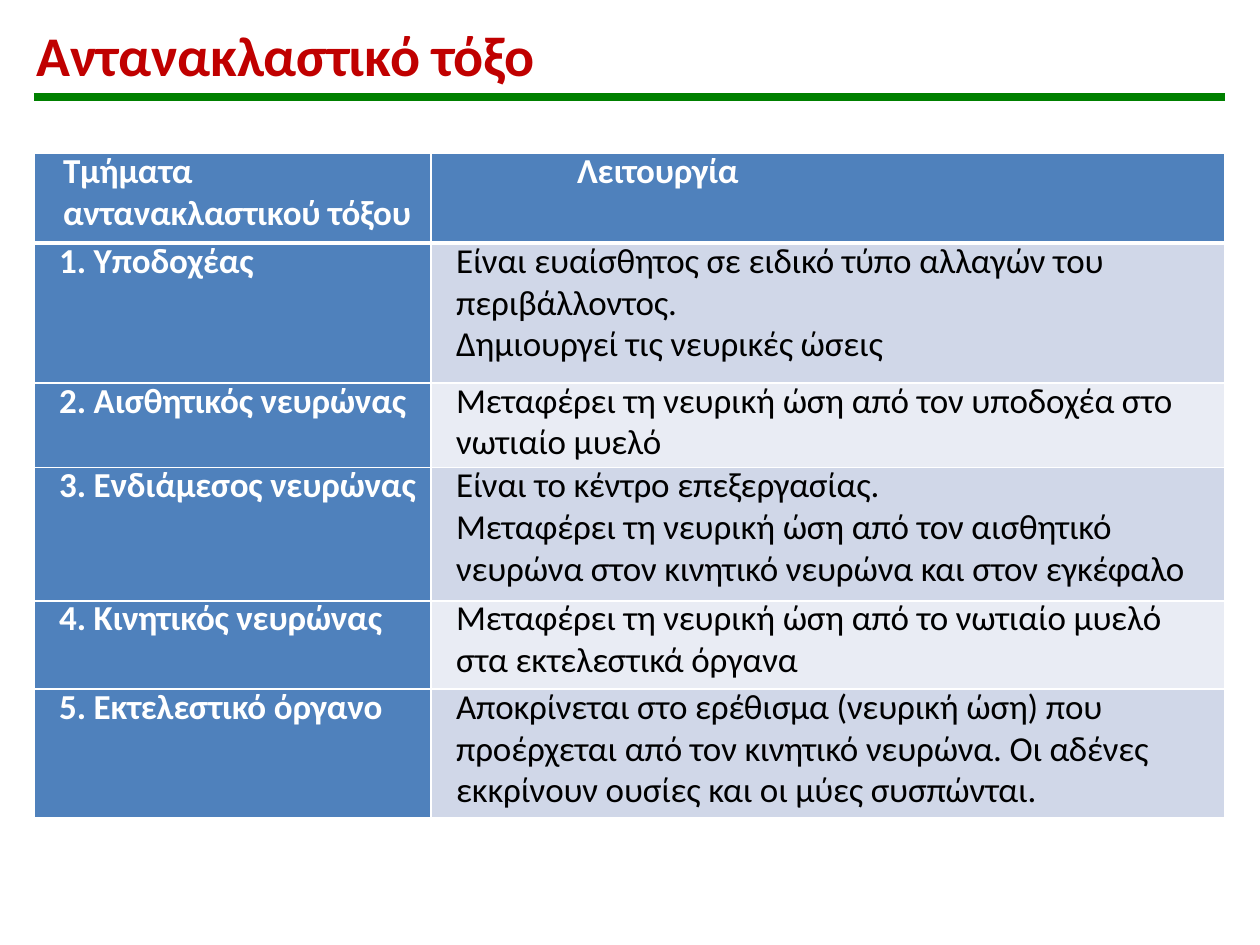
from pptx import Presentation
from pptx.dml.color import RGBColor
from pptx.enum.shapes import MSO_CONNECTOR as Conn
from pptx.oxml.ns import qn
from pptx.util import Inches, Pt
from lxml.etree import SubElement, Element

W, H = 10, 7.5
LEFT, RIGHT = 0.27, 9.72
BLUE, DARK_BAND, LIGHT_BAND = "4F81BC", "D0D7E8", "E9ECF4"
WHITE, BLACK, RED, GREEN = "FFFFFF", "000000", "C00000", "008000"

COLUMNS = [3.15, 6.3]
ROW_HEIGHTS = [0.71, 1.11, 0.67, 1.06, 0.7, 1.02]
FIRST_LINE, NEXT_LINE = 22.6, 23.9  # line pitch in points

HEADER = (["Τμήματα", "αντανακλαστικού τόξου"], ["Λειτουργία"])
PARTS = [
    ("1. Υποδοχέας",
     ["Είναι ευαίσθητος σε ειδικό τύπο αλλαγών του",
      "περιβάλλοντος.",
      "Δημιουργεί τις νευρικές ώσεις"]),
    ("2. Αισθητικός νευρώνας",
     ["Μεταφέρει τη νευρική ώση από τον υποδοχέα στο",
      "νωτιαίο μυελό"]),
    ("3. Ενδιάμεσος νευρώνας",
     ["Είναι το κέντρο επεξεργασίας.",
      "Μεταφέρει τη νευρική ώση από τον αισθητικό  νευρώνα "
      "στον κινητικό νευρώνα και στον εγκέφαλο"]),
    ("4. Κινητικός νευρώνας",
     ["Μεταφέρει τη νευρική ώση από το νωτιαίο μυελό",
      "στα εκτελεστικά όργανα"]),
    ("5. Εκτελεστικό όργανο",
     ["Αποκρίνεται στο ερέθισμα (νευρική ώση) που",
      "προέρχεται από τον κινητικό νευρώνα. Οι αδένες  εκκρίνουν "
      "ουσίες και οι μύες συσπώνται."]),
]


def rgb(value):
    return RGBColor.from_string(value)


def add_run(p, text, size, color, bold):
    r = p.add_run()
    r.text = text
    font = r.font
    font.name, font.size, font.bold = "Calibri", Pt(size), bold
    font.color.rgb = rgb(color)
    r._r.get_or_add_rPr().set("spc", "-10")


def set_indent(p, inches):
    pPr = p._p.get_or_add_pPr()
    pPr.set("marL", str(Inches(inches)))
    pPr.set("indent", "0")


def set_borders(cell, top, bottom):
    tcPr = cell._tc.get_or_add_tcPr()
    widths = {"a:lnL": 1, "a:lnR": 1, "a:lnT": top, "a:lnB": bottom}
    for i, (tag, width) in enumerate(widths.items()):
        ln = Element(qn(tag), w=str(Pt(width)))
        fill = SubElement(ln, qn("a:solidFill"))
        SubElement(fill, qn("a:srgbClr"), val=WHITE)
        tcPr.insert(i, ln)


def fill_cell(cell, lines, fill, color, bold, indent, top=1, bottom=1):
    cell.margin_left = cell.margin_right = 0
    cell.margin_top = cell.margin_bottom = 0
    cell.fill.solid()
    cell.fill.fore_color.rgb = rgb(fill)
    set_borders(cell, top, bottom)
    tf = cell.text_frame
    for i, line in enumerate(lines):
        p = tf.add_paragraph() if i else tf.paragraphs[0]
        set_indent(p, indent)
        p.line_spacing = Pt(NEXT_LINE if i else FIRST_LINE)
        add_run(p, line, 20, color, bold)


def add_title(s, text):
    box = s.shapes.add_textbox(Inches(0.28), Inches(0.14), Inches(4.01), Inches(0.56))
    tf = box.text_frame
    tf.word_wrap = True
    tf.margin_left = tf.margin_right = tf.margin_bottom = 0
    tf.margin_top = Inches(0.02)
    set_indent(tf.paragraphs[0], 0.01)
    add_run(tf.paragraphs[0], text, 32, RED, True)


def add_rule(s, y):
    line = s.shapes.add_connector(
        Conn.STRAIGHT, Inches(LEFT), Inches(y), Inches(RIGHT), Inches(y))
    line.line.color.rgb = rgb(GREEN)
    line.line.width = Pt(4.56)
    SubElement(line._element.spPr, qn("a:effectLst"))


def add_parts_table(s):
    frame = s.shapes.add_table(
        len(ROW_HEIGHTS), len(COLUMNS), Inches(LEFT), Inches(1.22),
        Inches(sum(COLUMNS)), Inches(sum(ROW_HEIGHTS)))
    table = frame.table
    table.first_row = table.horz_banding = False
    for column, width in zip(table.columns, COLUMNS):
        column.width = Inches(width)
    for row, height in zip(table.rows, ROW_HEIGHTS):
        row.height = Inches(height)

    # Header, with a thick rule below it
    for col, indent in enumerate((0.23, 1.16)):
        fill_cell(table.cell(0, col), HEADER[col], BLUE, WHITE, True, indent, bottom=3)

    # Part names on blue, functions on alternating bands
    for row, (name, functions) in enumerate(PARTS, start=1):
        top = 3 if row == 1 else 1
        band = DARK_BAND if row % 2 else LIGHT_BAND
        fill_cell(table.cell(row, 0), [name], BLUE, WHITE, True, 0.2, top)
        fill_cell(table.cell(row, 1), functions, band, BLACK, False, 0.2, top)


def main():
    prs = Presentation()
    prs.slide_width, prs.slide_height = Inches(W), Inches(H)
    s = prs.slides.add_slide(prs.slide_layouts[6])
    add_parts_table(s)
    add_title(s, "Αντανακλαστικό τόξο")
    add_rule(s, 0.77)
    prs.save("out.pptx")


if __name__ == "__main__":
    main()
